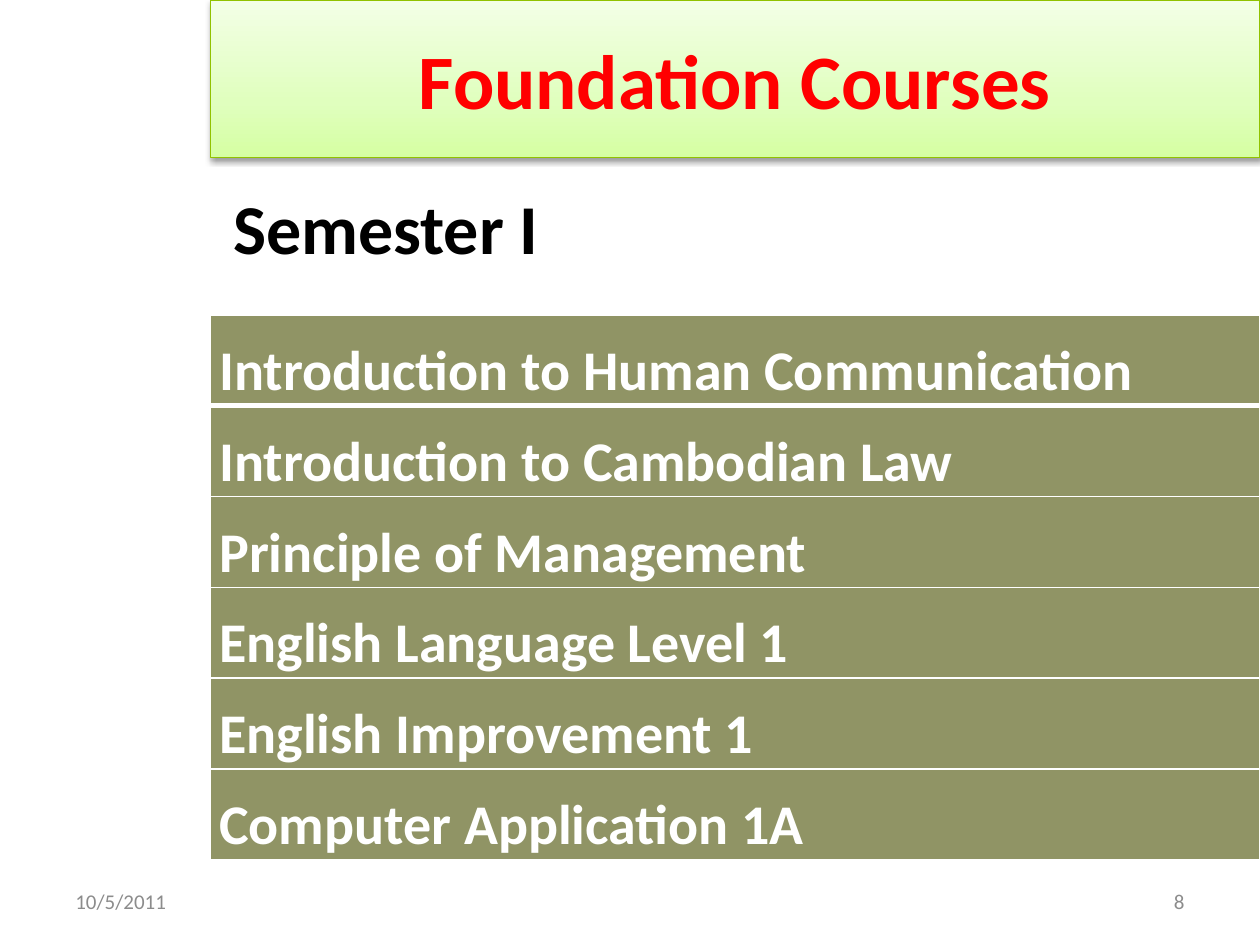
from lxml import etree
from copy import deepcopy
from pptx import Presentation
from pptx.dml.color import RGBColor
from pptx.enum.text import MSO_ANCHOR, PP_ALIGN
from pptx.oxml.ns import qn
from pptx.util import Cm, Pt

RED = RGBColor(0xFF, 0x00, 0x00)
BLACK = RGBColor(0x00, 0x00, 0x00)
WHITE = RGBColor(0xFF, 0xFF, 0xFF)
GREY = RGBColor(0x8C, 0x8C, 0x8C)
OLIVE = RGBColor(0x90, 0x94, 0x65)
LIME = RGBColor(0x91, 0xC2, 0x00)
TITLE_STOPS = [(0, RGBColor(0xD5, 0xFF, 0xA2)),
               (0.35, RGBColor(0xE0, 0xFF, 0xBE)),
               (1, RGBColor(0xF3, 0xFF, 0xE6))]
COURSES = ["Introduction to Human Communication", "Introduction to Cambodian Law",
           "Principle of Management", "English Language Level 1",
           "English Improvement 1", "Computer Application 1A"]
LEFT, WIDTH, ROW_HEIGHT = Cm(4.24), Cm(21.16), Cm(1.83)


def write(tf, content, size, color, bold=True, align=PP_ALIGN.LEFT):
    tf.text = content
    p = tf.paragraphs[0]
    p.alignment = align
    font = p.runs[0].font
    font.name, font.size, font.bold = "Calibri", Pt(size), bold
    font.color.rgb = color


def add_border(cell, side, width):
    """Add a white border; call before the cell's fill is set."""
    ln = etree.SubElement(cell._tc.get_or_add_tcPr(), qn(f"a:ln{side}"), w=str(Pt(width)))
    fill = etree.SubElement(ln, qn("a:solidFill"))
    etree.SubElement(fill, qn("a:srgbClr"), val=str(WHITE))


prs = Presentation()
prs.slide_width, prs.slide_height = Cm(25.4), Cm(19.05)
s = prs.slides.add_slide(prs.slide_layouts[5])

# Title banner
title = s.shapes.title
title.left, title.top, title.width, title.height = LEFT, Cm(0), WIDTH, Cm(3.18)
title.fill.gradient()
title.fill.gradient_angle = 90
gradient = title._element.spPr.find(".//" + qn("a:gsLst"))
gradient.append(deepcopy(gradient[0]))
for stop, (position, color) in zip(title.fill.gradient_stops, TITLE_STOPS):
    stop.position = position
    stop.color.rgb = color
title.line.color.rgb = LIME
title.line.width = Pt(0.75)
title.shadow.inherit = False
effects = title._element.spPr.find(qn("a:effectLst"))
shadow = etree.SubElement(effects, qn("a:outerShdw"), blurRad="40000", dist="20000",
                          dir="5400000", rotWithShape="0")
shade = etree.SubElement(shadow, qn("a:srgbClr"), val=str(BLACK))
etree.SubElement(shade, qn("a:alpha"), val="38000")
title.text_frame.vertical_anchor = MSO_ANCHOR.MIDDLE
write(title.text_frame, "Foundation Courses", 44, RED, align=PP_ALIGN.CENTER)

# Course table
table = s.shapes.add_table(len(COURSES), 1, LEFT, Cm(6.35), WIDTH,
                           ROW_HEIGHT * len(COURSES)).table
for i, course in enumerate(COURSES):
    cell = table.cell(i, 0)
    top = 3 if i == 1 else 1
    bottom = 3 if i == 0 else 1
    for side, width in (("L", 1), ("R", 1), ("T", top), ("B", bottom)):
        add_border(cell, side, width)
    cell.fill.solid()
    cell.fill.fore_color.rgb = OLIVE
    cell.vertical_anchor = MSO_ANCHOR.BOTTOM
    cell.margin_left = cell.margin_right = Cm(0.18)
    cell.margin_top = cell.margin_bottom = 0
    write(cell.text_frame, course, 32, WHITE)
    cell.text_frame.paragraphs[0].line_spacing = 1.15

# Subtitle, date and slide number
TOP, MIDDLE = MSO_ANCHOR.TOP, MSO_ANCHOR.MIDDLE
for content, x, y, w, h, size, color, bold, align, anchor in [
    ("Semester I", 4.45, 3.6, 15.67, 1.96, 40, BLACK, True, PP_ALIGN.LEFT, TOP),
    ("10/5/2011", 1.27, 17.66, 5.92, 1.01, 12, GREY, False, PP_ALIGN.LEFT, MIDDLE),
    ("8", 18.21, 17.66, 5.92, 1.01, 12, GREY, False, PP_ALIGN.RIGHT, MIDDLE),
]:
    tf = s.shapes.add_textbox(Cm(x), Cm(y), Cm(w), Cm(h)).text_frame
    tf.word_wrap = True
    tf.vertical_anchor = anchor
    write(tf, content, size, color, bold, align)

prs.save("out.pptx")
